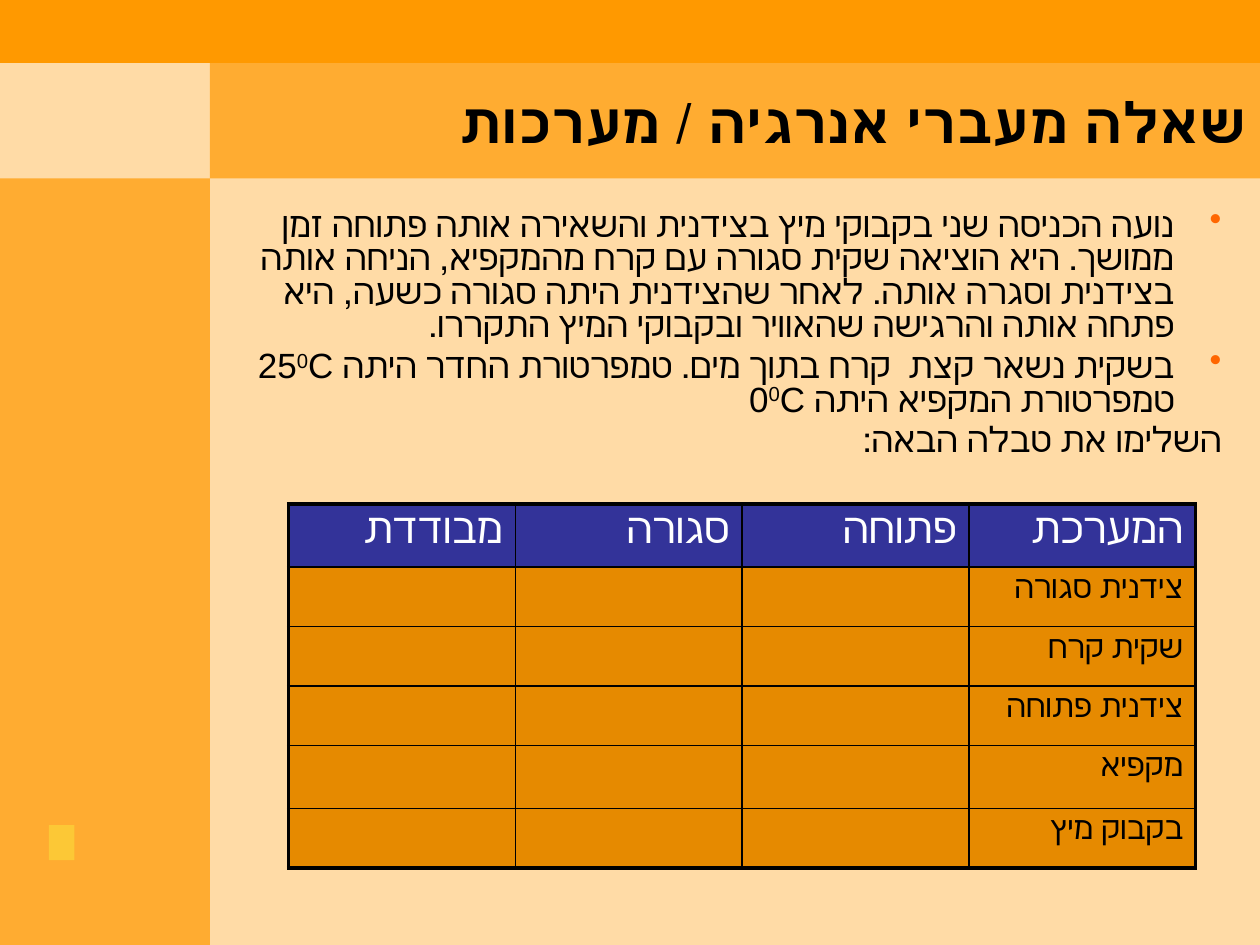
from lxml import etree
from pptx import Presentation
from pptx import util as u
from pptx.dml.color import RGBColor
from pptx.enum import lang, shapes, text
from pptx.oxml.ns import qn

Pt = u.Pt
FONT = "Arial"
BLACK = RGBColor(0x00, 0x00, 0x00)
WHITE = RGBColor(0xFF, 0xFF, 0xFF)
CREAM = RGBColor(0xFF, 0xDB, 0xA6)
ORANGE = RGBColor(0xFF, 0x99, 0x00)
LIGHT_ORANGE = RGBColor(0xFF, 0xAC, 0x31)
YELLOW = RGBColor(0xFC, 0xC8, 0x36)
BULLET = RGBColor(0xFF, 0x66, 0x00)
HEADER = RGBColor(0x33, 0x33, 0x99)
CELL = RGBColor(0xE6, 0x8A, 0x00)

BODY = [  # (bulleted, [(text, is superscript)])
    (True, [("נועה הכניסה שני בקבוקי מיץ בצידנית והשאירה אותה פתוחה זמן ממושך. "
             "היא הוציאה שקית סגורה עם קרח מהמקפיא, הניחה אותה בצידנית וסגרה אותה. "
             "לאחר שהצידנית היתה סגורה כשעה, היא פתחה אותה והרגישה שהאוויר "
             "ובקבוקי המיץ התקררו.", False)]),
    (True, [("בשקית נשאר קצת  קרח בתוך מים. טמפרטורת החדר היתה 25", False),
            ("0", True), ("C טמפרטורת המקפיא היתה 0", False),
            ("0", True), ("C", False)]),
    (False, [("השלימו את טבלה הבאה:", False)]),
]
HEADINGS = ["מבודדת", "סגורה", "פתוחה", "המערכת"]
SYSTEMS = ["צידנית סגורה", "שקית קרח", "צידנית פתוחה", "מקפיא", "בקבוק מיץ"]
COL_WIDTH = 129.6
ROW_HEIGHTS = [32.4, 34, 34, 34, 36, 34]


def add_band(s, left, top, width, height, color):
    sp = s.shapes.add_shape(shapes.MSO_SHAPE.RECTANGLE,
                            Pt(left), Pt(top), Pt(width), Pt(height))
    sp.shadow.inherit = False
    sp.fill.solid()
    sp.fill.fore_color.rgb = color
    sp.line.fill.background()


def set_rtl(p):
    p.alignment = text.PP_ALIGN.RIGHT
    pPr = p._p.get_or_add_pPr()
    pPr.set("rtl", "1")
    return pPr


def add_run(p, words, size, color=BLACK, bold=False, raised=False):
    r = p.add_run()
    r.text = words
    r.font.size = Pt(size)
    r.font.bold = bold
    r.font.name = FONT
    r.font.color.rgb = color
    r.font.language_id = lang.MSO_LANGUAGE_ID.HEBREW
    if raised:
        r._r.get_or_add_rPr().set("baseline", "30000")


def set_title(s):
    sp = s.shapes.title
    sp.left, sp.top, sp.width, sp.height = Pt(120), Pt(36), Pt(600), Pt(66)
    sp.fill.solid()
    sp.fill.fore_color.rgb = LIGHT_ORANGE
    tf = sp.text_frame
    tf.vertical_anchor = text.MSO_ANCHOR.MIDDLE
    p = tf.paragraphs[0]
    set_rtl(p)
    add_run(p, "שאלה מעברי אנרגיה / מערכות", 32, bold=True)


def add_body(s):
    tf = s.shapes.add_textbox(Pt(120), Pt(116.6), Pt(585.4), Pt(158.4)).text_frame
    tf.word_wrap = True
    for i, (bulleted, runs) in enumerate(BODY):
        p = tf.add_paragraph() if i else tf.paragraphs[0]
        pPr = set_rtl(p)
        pPr.set("marL", str(Pt(27)))
        pPr.set("indent", str(Pt(-27)))
        if bulleted:
            clr = etree.SubElement(pPr, qn("a:buClr"))
            etree.SubElement(clr, qn("a:srgbClr")).set("val", str(BULLET))
            etree.SubElement(pPr, qn("a:buChar")).set("char", "•")
        else:
            etree.SubElement(pPr, qn("a:buNone"))
        p.line_spacing = 0.8
        if i:
            p.space_before = Pt(4)
        for words, raised in runs:
            add_run(p, words, 20, raised=raised)


def set_border(cell, side, width):
    ln = etree.SubElement(cell._tc.get_or_add_tcPr(), qn("a:ln" + side))
    ln.set("w", str(Pt(width)))
    fill = etree.SubElement(ln, qn("a:solidFill"))
    etree.SubElement(fill, qn("a:srgbClr")).set("val", str(BLACK))


def add_systems_table(s):
    rows = [HEADINGS] + [["", "", "", name] for name in SYSTEMS]
    n_rows, n_cols = len(rows), len(HEADINGS)
    table = s.shapes.add_table(n_rows, n_cols, Pt(164.9), Pt(288),
                               Pt(COL_WIDTH * n_cols), Pt(sum(ROW_HEIGHTS))).table
    table.first_row = table.horz_banding = False
    for col in table.columns:
        col.width = Pt(COL_WIDTH)
    for i, row in enumerate(rows):
        table.rows[i].height = Pt(ROW_HEIGHTS[i])
        for j, words in enumerate(row):
            cell = table.cell(i, j)
            outer = {"L": j == 0, "R": j == n_cols - 1,
                     "T": i == 0, "B": i == n_rows - 1}
            for side, is_outer in outer.items():
                set_border(cell, side, 2.25 if is_outer else 1)
            cell.fill.solid()
            cell.fill.fore_color.rgb = CELL if i else HEADER
            p = cell.text_frame.paragraphs[0]
            set_rtl(p)
            if words:
                add_run(p, words, 18 if i else 24, BLACK if i else WHITE)


def main():
    prs = Presentation()
    prs.slide_width, prs.slide_height = Pt(720), Pt(540)
    s = prs.slides.add_slide(prs.slide_layouts[5])
    s.background.fill.solid()
    s.background.fill.fore_color.rgb = CREAM

    # Top band, side band and its small marker
    add_band(s, 0, 0, 720, 36, ORANGE)
    add_band(s, 0, 102, 120, 438, LIGHT_ORANGE)
    add_band(s, 28, 471.5, 14.5, 20, YELLOW)

    # Question and the table to fill in
    set_title(s)
    add_body(s)
    add_systems_table(s)
    prs.save("out.pptx")


if __name__ == "__main__":
    main()
